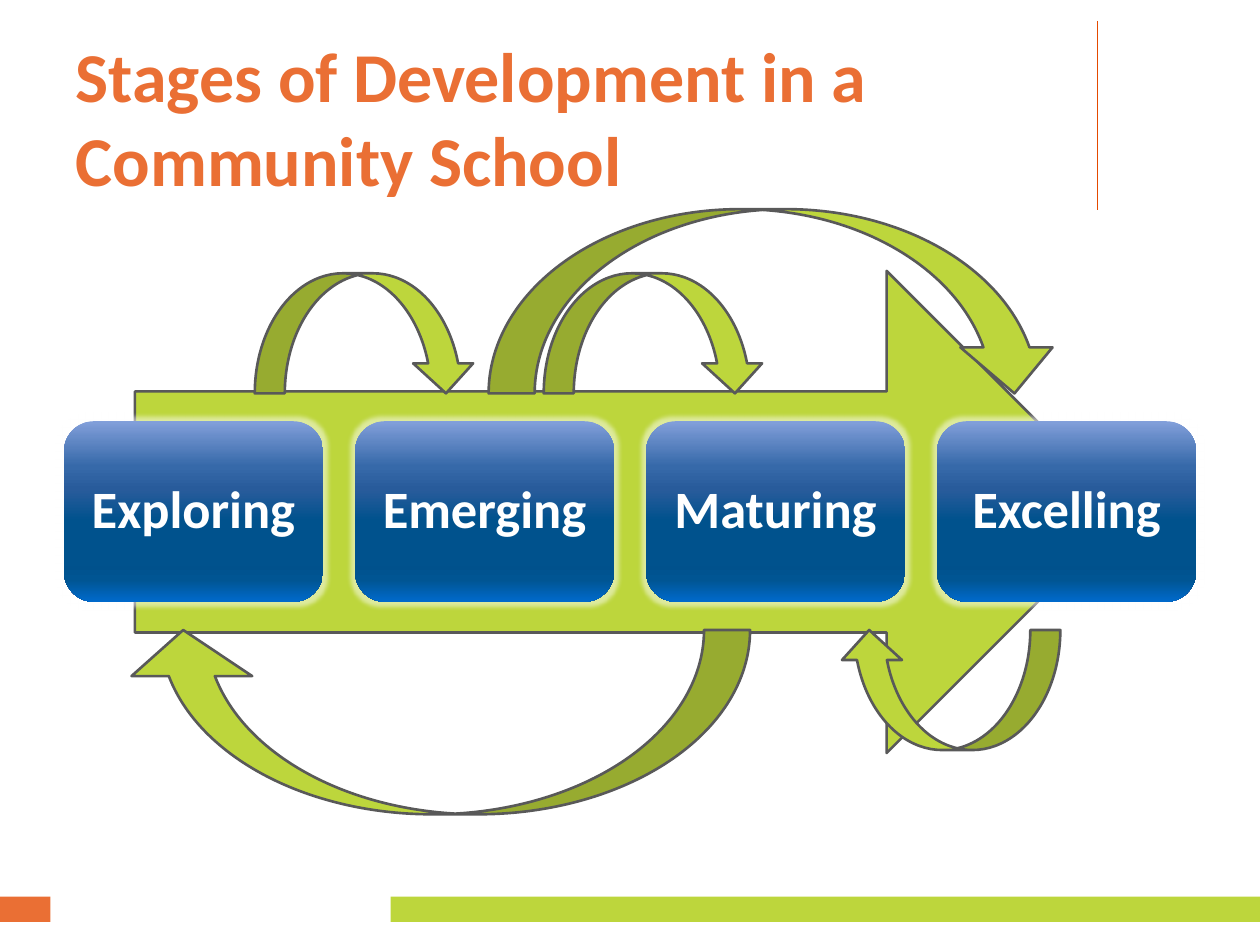
from dataclasses import dataclass
from typing import Any

import pptx
import pptx.dml.color
import pptx.enum.shapes
import pptx.enum.text
import pptx.oxml
import pptx.oxml.ns
import pptx.util

Pt = pptx.util.Pt
RGBColor = pptx.dml.color.RGBColor
SHAPE = pptx.enum.shapes.MSO_SHAPE
ALIGN = pptx.enum.text.PP_ALIGN
ANCHOR = pptx.enum.text.MSO_ANCHOR
NAMESPACE = pptx.oxml.ns.nsdecls("a")

ORANGE = RGBColor(0xEA, 0x6F, 0x34)
RULE_RED = RGBColor(0xE5, 0x4A, 0x00)
LIME = RGBColor(0xBD, 0xD6, 0x3C)
OUTLINE = RGBColor(0x59, 0x59, 0x59)
WHITE = RGBColor(0xFF, 0xFF, 0xFF)
CARD_GRADIENT = {
    0: RGBColor(0x82, 0x9F, 0xDA),
    25: RGBColor(0x36, 0x69, 0xA9),
    38: RGBColor(0x28, 0x5B, 0x9B),
    55: RGBColor(0x00, 0x52, 0x8D),
    80: RGBColor(0x00, 0x51, 0x8C),
    88: RGBColor(0x00, 0x55, 0x93),
    100: RGBColor(0x00, 0x6A, 0xCC),
}

STAGES = ["Exploring", "Emerging", "Maturing", "Excelling"]
CARD_LEFT, CARD_TOP, CARD_WIDTH, CARD_HEIGHT = 36.6, 240.7, 148, 103.2
CARD_PITCH = 166.3


@dataclass
class Box:
    left: float
    top: float
    width: float
    height: float

    def lengths(self) -> list:
        return [Pt(value) for value in (self.left, self.top, self.width, self.height)]


@dataclass
class LoopArrow:
    box: Box
    rotation: int = 0
    bend: float = 0.5


LOOP_TOP, RETURN_TOP = 156.2, 360
SHORT_WIDTH, SHORT_HEIGHT, LONG_HEIGHT = 126.4, 68.6, 105.3
LOOP_ARROWS = [
    LoopArrow(Box(145.6, LOOP_TOP, SHORT_WIDTH, SHORT_HEIGHT)),
    LoopArrow(Box(279.2, 119.5, 326.8, LONG_HEIGHT)),
    LoopArrow(Box(70.2, RETURN_TOP, 358.4, LONG_HEIGHT), 180, 0.655),
    LoopArrow(Box(310.7, LOOP_TOP, SHORT_WIDTH, SHORT_HEIGHT)),
    LoopArrow(Box(479.5, RETURN_TOP, SHORT_WIDTH, SHORT_HEIGHT), 180),
]


def apply_format(target: Any, values: dict) -> None:
    for name, value in values.items():
        setattr(target, name, value)


def set_font(paragraph: Any, size: float, color: RGBColor) -> None:
    apply_format(paragraph.font, {"name": "Calibri", "size": Pt(size), "bold": True})
    paragraph.font.color.rgb = color


def add_plain_shape(slide: Any, kind: Any, box: Box, outlined: bool = False) -> Any:
    shape = slide.shapes.add_shape(kind, *box.lengths())
    shape.shadow.inherit = False
    shape.fill.solid()
    shape.fill.fore_color.rgb = LIME
    if outlined:
        shape.line.color.rgb = OUTLINE
        shape.line.width = Pt(1.5)
    else:
        shape.line.fill.background()
    return shape


def add_card(slide: Any, box: Box, label: str) -> None:
    shape = add_plain_shape(slide, SHAPE.ROUNDED_RECTANGLE, box)

    # Seven-stop gradient from top to bottom
    shape.fill.gradient()
    shape.fill.gradient_angle = 270
    properties = shape.element.spPr
    stops = properties.find(".//" + pptx.oxml.ns.qn("a:gsLst"))
    for stop in list(stops):
        stops.remove(stop)
    for percent, color in CARD_GRADIENT.items():
        stops.append(pptx.oxml.parse_xml(
            f'<a:gs {NAMESPACE} pos="{percent * 1000}"><a:srgbClr val="{color}"/></a:gs>'))

    # Pale glow around the card
    properties.find(pptx.oxml.ns.qn("a:effectLst")).append(pptx.oxml.parse_xml(
        f'<a:glow {NAMESPACE} rad="63500"><a:srgbClr val="{WHITE}">'
        '<a:alpha val="50000"/></a:srgbClr></a:glow>'))

    # The rounded corners already inset the text area
    frame = shape.text_frame
    inset = Pt(6)
    apply_format(frame, {
        "word_wrap": True, "vertical_anchor": ANCHOR.MIDDLE,
        "margin_left": inset, "margin_right": inset,
        "margin_top": inset, "margin_bottom": inset,
    })
    paragraph = frame.paragraphs[0]
    paragraph.text = label
    apply_format(paragraph, {"alignment": ALIGN.CENTER, "line_spacing": 0.9})
    set_font(paragraph, 30, WHITE)


def add_loop_arrow(slide: Any, arrow: LoopArrow) -> None:
    shape = add_plain_shape(slide, SHAPE.CURVED_DOWN_ARROW, arrow.box, outlined=True)
    shape.rotation = arrow.rotation
    shape.adjustments[1] = arrow.bend


def add_title(slide: Any, text: str) -> None:
    title = slide.shapes.title
    apply_format(title, dict(zip(("left", "top", "width", "height"),
                                 Box(36, 21.6, 583.2, 90).lengths())))
    title.text_frame.text = text
    apply_format(title.text_frame, {"word_wrap": True, "vertical_anchor": ANCHOR.MIDDLE})
    paragraph = title.text_frame.paragraphs[0]
    paragraph.alignment = ALIGN.LEFT
    set_font(paragraph, 40, ORANGE)


def add_decoration(slide: Any) -> None:
    rule = slide.shapes.add_connector(
        pptx.enum.shapes.MSO_CONNECTOR.STRAIGHT, Pt(627.1), Pt(12), Pt(627.1), Pt(120))
    rule.line.color.rgb = RULE_RED
    rule.line.width = Pt(0.75)
    rule.element.spPr.append(pptx.oxml.parse_xml(f"<a:effectLst {NAMESPACE}/>"))
    rule.element.remove(rule.element.find(pptx.oxml.ns.qn("p:style")))
    add_plain_shape(slide, SHAPE.RECTANGLE, Box(223.2, 512.4, 496.8, 14.4))
    accent = add_plain_shape(slide, SHAPE.RECTANGLE, Box(0, 512.4, 28.8, 14.4))
    accent.fill.fore_color.rgb = ORANGE


def main() -> None:
    presentation = pptx.Presentation()
    presentation.slide_width, presentation.slide_height = Pt(720), Pt(540)
    slide = presentation.slides.add_slide(presentation.slide_layouts[5])

    add_decoration(slide)
    add_title(slide, "Stages of Development in a Community School")

    # Large arrow behind the stage cards
    add_plain_shape(slide, SHAPE.RIGHT_ARROW, Box(77.1, 154.8, 567.3, 275.5), outlined=True)
    for index, stage in enumerate(STAGES):
        left = CARD_LEFT + index * CARD_PITCH
        add_card(slide, Box(left, CARD_TOP, CARD_WIDTH, CARD_HEIGHT), stage)

    # Arrows looping between stages
    for arrow in LOOP_ARROWS:
        add_loop_arrow(slide, arrow)

    presentation.save("out.pptx")


if __name__ == "__main__":
    main()
